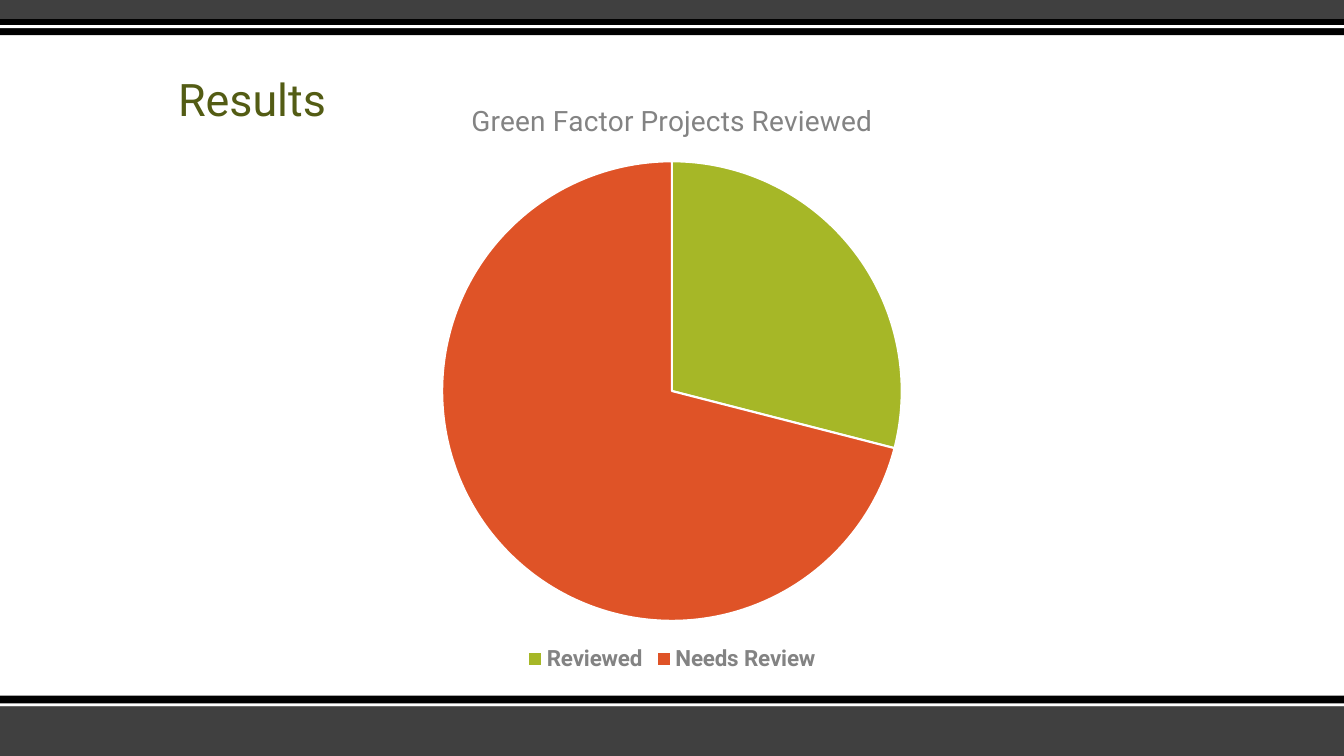
"""Build the results slide with a pie chart of reviewed projects."""
from pptx import Presentation
from pptx.chart.data import CategoryChartData
from pptx.dml.color import RGBColor
from pptx.enum import chart as charts, shapes, text
from pptx.util import Pt


def color(value):
    return RGBColor.from_string(value)


def style(font, size, value, bold=False):
    font.name = "Roboto"
    font.size = Pt(size)
    font.bold = bold
    font.color.rgb = color(value)


presentation = Presentation()
presentation.slide_width = Pt(960)
presentation.slide_height = Pt(540)
slide = presentation.slides.add_slide(presentation.slide_layouts[5])

bands = [
    (504, 36, "404040"),
    (496.8, 7.9, "000000"),
    (502.4, 2.2, "FFFFFF"),
    (0, 13.6, "404040"),
    (13.6, 11.5, "000000"),
    (18, 2.2, "FFFFFF"),
]
for top, height, fill in bands:
    band = slide.shapes.add_shape(
        shapes.MSO_SHAPE.RECTANGLE, 0, Pt(top), Pt(960), Pt(height))
    band.shadow.inherit = False
    band.fill.solid()
    band.fill.fore_color.rgb = color(fill)
    band.line.fill.background()

title = slide.shapes.title
title.left, title.top, title.width, title.height = Pt(120), Pt(48), Pt(720), Pt(84)
frame = title.text_frame
frame.text = "Results"
frame.word_wrap = True
frame.auto_size = text.MSO_AUTO_SIZE.NONE
frame.vertical_anchor = text.MSO_ANCHOR.BOTTOM
frame.margin_bottom = Pt(41.5)
paragraph = frame.paragraphs[0]
paragraph.alignment = text.PP_ALIGN.LEFT
paragraph.line_spacing = 0.9
style(paragraph.font, 32, "535C14")

review_data = CategoryChartData()
review_data.categories = ["Reviewed", "Needs Review"]
review_data.add_series("Green Factor Projects Reviewed", (29, 71))
chart = slide.shapes.add_chart(
    charts.XL_CHART_TYPE.PIE, Pt(160), Pt(56.9), Pt(640), Pt(426.2), review_data).chart
style(chart.font, 10, "404040")

chart.has_title = True
chart.chart_title.include_in_layout = False
chart.chart_title.text_frame.text = "Green Factor Projects Reviewed"
style(chart.chart_title.text_frame.paragraphs[0].font, 20, "838383")

chart.has_legend = True
chart.legend.position = charts.XL_LEGEND_POSITION.BOTTOM
chart.legend.include_in_layout = False
style(chart.legend.font, 16, "838383", bold=True)

plot = chart.plots[0]
plot.vary_by_categories = True
for index, fill in enumerate(["A6B727", "DF5327"]):
    point = plot.series[0].points[index]
    point.format.fill.solid()
    point.format.fill.fore_color.rgb = color(fill)
    point.format.line.color.rgb = color("FFFFFF")
    point.format.line.width = Pt(1.5)

presentation.save("out.pptx")
